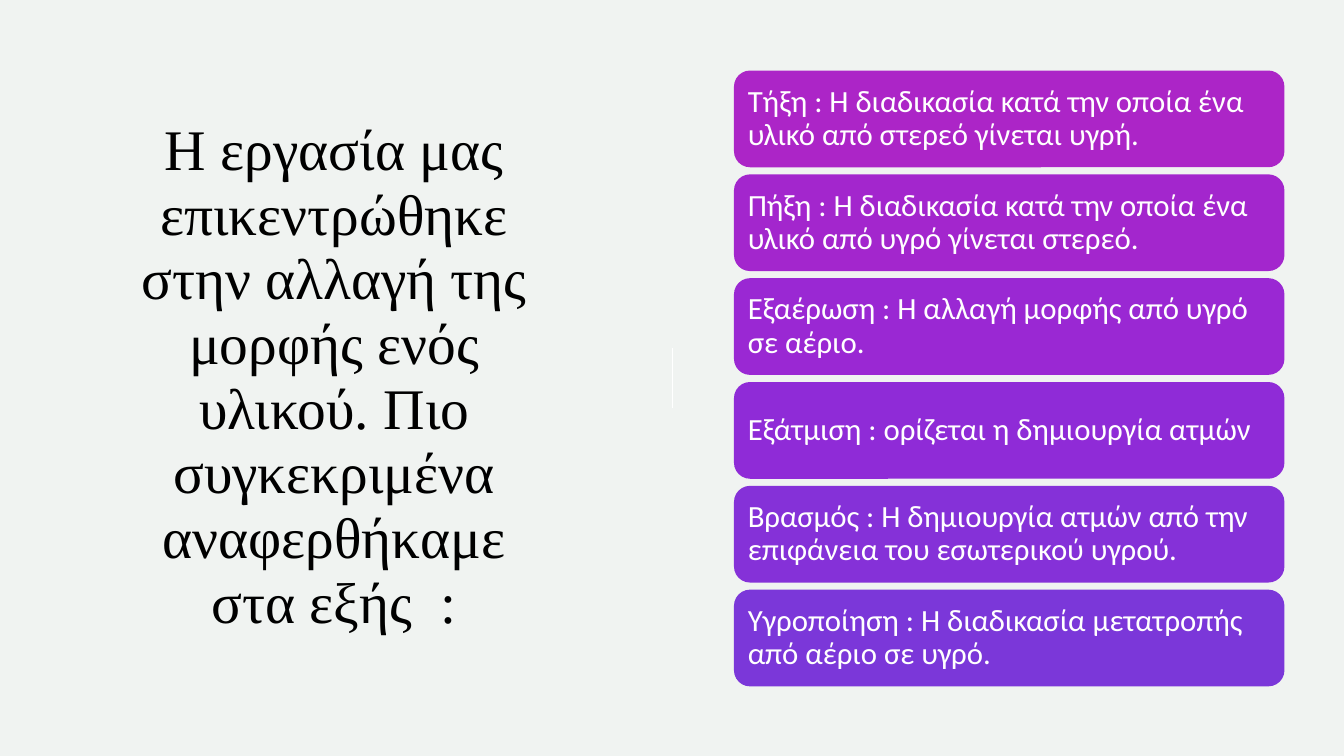
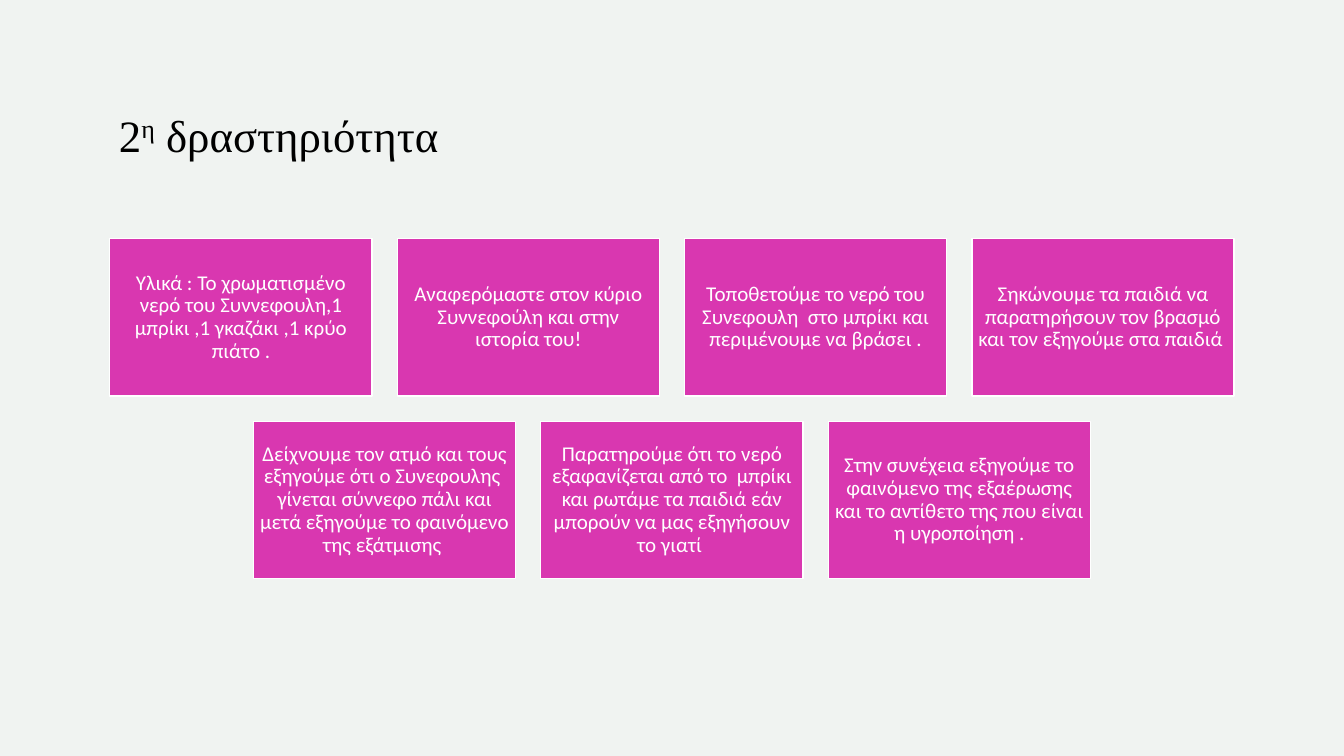
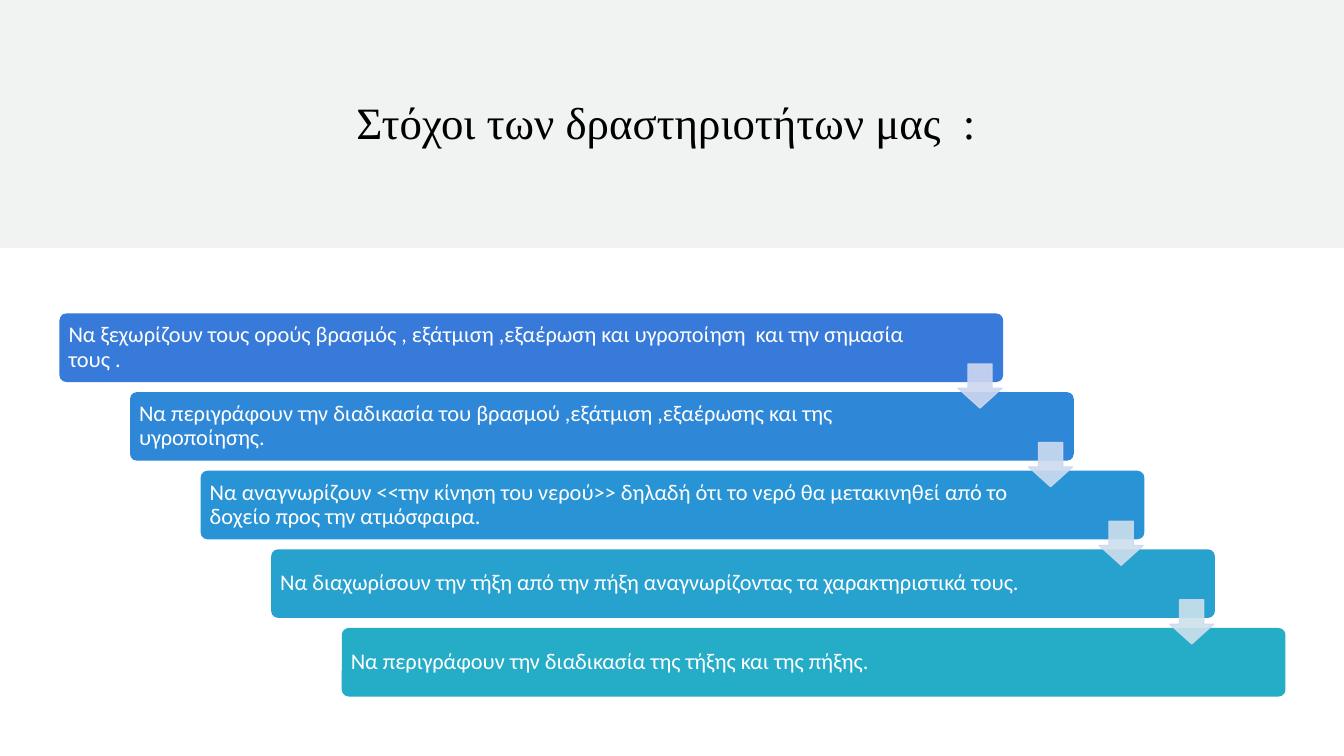
from lxml import etree
from pptx import Presentation
from pptx.dml.color import RGBColor
from pptx.enum.shapes import MSO_CONNECTOR, MSO_SHAPE
from pptx.enum.text import MSO_ANCHOR, MSO_AUTO_SIZE, PP_ALIGN
from pptx.oxml.ns import qn
from pptx.util import Inches, Pt

RECTANGLE = MSO_SHAPE.RECTANGLE
ROUNDED = MSO_SHAPE.ROUNDED_RECTANGLE
DOWN_ARROW = MSO_SHAPE.DOWN_ARROW
STRAIGHT = MSO_CONNECTOR.STRAIGHT
LEFT, CENTER = PP_ALIGN.LEFT, PP_ALIGN.CENTER
MIDDLE, BOTTOM = MSO_ANCHOR.MIDDLE, MSO_ANCHOR.BOTTOM
NO_AUTOFIT = MSO_AUTO_SIZE.NONE

SLIDE_WIDTH, SLIDE_HEIGHT = 13.33, 7.5
BACKGROUND, WHITE, BLACK = "F0F3F1", "FFFFFF", "000000"
CARD_COLOR, ARROW_LINE = "D937B0", "CED7F1"
TITLE_FONT, BODY_FONT = "Times New Roman", "Calibri"

DEFINITIONS = [
    ("AC25C7", "Τήξη : Η διαδικασία κατά την οποία ένα υλικό από στερεό γίνεται υγρή."),
    ("A326CD", "Πήξη : Η διαδικασία κατά την οποία ένα υλικό από υγρό γίνεται στερεό."),
    ("9A28D3", "Εξαέρωση : Η αλλαγή μορφής από υγρό σε αέριο."),
    ("8F2BD7", "Εξάτμιση : ορίζεται η δημιουργία ατμών"),
    ("8531D8", "Βρασμός : Η δημιουργία ατμών από την επιφάνεια του εσωτερικού υγρού."),
    ("7B37D9", "Υγροποίηση : Η διαδικασία μετατροπής από αέριο σε υγρό."),
]
ACTIVITY_ROWS = [
    [
        "Υλικά : Το χρωματισμένο νερό του Συννεφουλη,1 μπρίκι ,1 γκαζάκι ,1 κρύο πιάτο .",
        "Αναφερόμαστε στον κύριο Συννεφούλη και στην ιστορία του!",
        "Τοποθετούμε το νερό του Συνεφουλη  στο μπρίκι και περιμένουμε να βράσει .",
        "Σηκώνουμε τα παιδιά να παρατηρήσουν τον βρασμό και τον εξηγούμε στα παιδιά ",
    ],
    [
        "Δείχνουμε τον ατμό και τους εξηγούμε ότι ο Συνεφουλης  γίνεται σύννεφο πάλι "
        "και μετά εξηγούμε το φαινόμενο της εξάτμισης ",
        "Παρατηρούμε ότι το νερό εξαφανίζεται από το  μπρίκι και ρωτάμε τα παιδιά "
        "εάν μπορούν να μας εξηγήσουν το γιατί ",
        "Στην συνέχεια εξηγούμε το φαινόμενο της εξαέρωσης και το αντίθετο της "
        "που είναι η υγροποίηση .",
    ],
]
GOALS = [
    ("377AD9", "Να ξεχωρίζουν τους ορούς βρασμός , εξάτμιση ,εξαέρωση και υγροποίηση  "
               "και την σημασία τους ."),
    ("2F87D8", "Να περιγράφουν την διαδικασία του βρασμού ,εξάτμιση ,εξαέρωσης "
               "και της υγροποίησης."),
    ("2894D6", "Να αναγνωρίζουν <<την κίνηση του νερού>> δηλαδή ότι το νερό θα "
               "μετακινηθεί από το δοχείο προς την ατμόσφαιρα."),
    ("27A1CE", "Να διαχωρίσουν την τήξη από την πήξη αναγνωρίζοντας τα χαρακτηριστικά τους."),
    ("25ACC7", "Να περιγράφουν την διαδικασία της τήξης και της πήξης."),
]
ARROW_COLORS = ["CED7F1", "CDDBEF", "CDDFED", "CDE2EB"]


def rgb(color):
    """Turn a hex string into a colour."""
    return RGBColor.from_string(color)


def write_text(frame, text, size, font=BODY_FONT, color=WHITE, align=LEFT,
               anchor=MIDDLE, spacing=0.9, insets=None, superscript=""):
    """Write one formatted paragraph, raising the superscript part if given."""
    frame.word_wrap = True
    frame.auto_size = NO_AUTOFIT
    frame.vertical_anchor = anchor
    if insets:
        (frame.margin_left, frame.margin_top,
         frame.margin_right, frame.margin_bottom) = map(Inches, insets)
    paragraph = frame.paragraphs[0]
    paragraph.alignment = align
    paragraph.line_spacing = spacing
    for part in text.partition(superscript) if superscript else [text]:
        run = paragraph.add_run()
        run.text = part
        run.font.size = Pt(size)
        run.font.name = font
        run.font.color.rgb = rgb(color)
        if part == superscript:
            run.font._element.set("baseline", "30000")


def add_titled_slide(prs, title, box, size=32, **text_format):
    """Add a title-only slide with its title placed in the box."""
    slide = prs.slides.add_slide(prs.slide_layouts[5])
    heading = slide.shapes.title
    heading.left, heading.top, heading.width, heading.height = map(Inches, box)
    write_text(heading.text_frame, title, size, font=TITLE_FONT, color=BLACK, **text_format)
    return slide


def add_block(slide, kind, box, fill, line=None, line_width=0.75, adjustments=()):
    """Add a flat filled shape with an optional outline."""
    block = slide.shapes.add_shape(kind, *map(Inches, box))
    block.shadow.inherit = False
    block.fill.solid()
    block.fill.fore_color.rgb = rgb(fill)
    if line:
        block.line.color.rgb = rgb(line)
        block.line.width = Pt(line_width)
    else:
        block.line.fill.background()
    for index, value in enumerate(adjustments):
        block.adjustments[index] = value
    return block


def add_divider(slide, x, top, bottom):
    """Add a thin white vertical line."""
    divider = slide.shapes.add_connector(
        STRAIGHT, Inches(x), Inches(top), Inches(x), Inches(bottom))
    divider.line.color.rgb = rgb(WHITE)
    divider.line.width = Pt(1)
    etree.SubElement(divider._element.spPr, qn("a:effectLst"))


def set_opacity(shape, percent):
    """Make the fill and outline of a shape partly transparent."""
    for color in shape._element.spPr.iter(qn("a:srgbClr")):
        etree.SubElement(color, qn("a:alpha")).set("val", str(percent * 1000))


def build_definitions(prs):
    """Build the slide listing the changes of state."""
    slide = add_titled_slide(
        prs,
        "Η εργασία μας επικεντρώθηκε στην αλλαγή της μορφής ενός υλικού. "
        "Πιο συγκεκριμένα αναφερθήκαμε στα εξής  :",
        (1.18, 1.18, 4.27, 5.13), size=41, align=CENTER, spacing=0.94)
    add_divider(slide, 6.67, 3.45, 4.05)
    for index, (color, definition) in enumerate(DEFINITIONS):
        bar = add_block(slide, ROUNDED, (7.28, 0.7 + index * 1.03, 5.46, 0.96), color)
        write_text(bar.text_frame, definition, 22, insets=[0.09] * 4)


def build_activity(prs):
    """Build the slide with centred rows of activity cards."""
    slide = add_titled_slide(prs, "2η δραστηριότητα", (1.08, 0.43, 11.17, 1.22),
                             anchor=BOTTOM, spacing=1.0, superscript="η")
    width, height, gap = 2.6, 1.56, 0.25
    for row, steps in enumerate(ACTIVITY_ROWS):
        left = (SLIDE_WIDTH - len(steps) * (width + gap) + gap) / 2
        top = 2.37 + row * (height + gap)
        for column, step in enumerate(steps):
            card = add_block(slide, RECTANGLE,
                             (left + column * (width + gap), top, width, height),
                             CARD_COLOR, line=WHITE, line_width=0.85)
            write_text(card.text_frame, step, 15, align=CENTER, insets=[0.06] * 4)


def build_goals(prs):
    """Build the staircase of goals joined by arrows."""
    slide = add_titled_slide(prs, "Στόχοι των δραστηριοτήτων μας  : ",
                             (1.18, 0.59, 10.97, 1.23), align=CENTER, spacing=1.0)
    panel_top, step_x, step_y = 2.46, 0.7, 0.78
    add_block(slide, RECTANGLE,
              (0, panel_top, SLIDE_WIDTH, SLIDE_HEIGHT - panel_top), WHITE)
    for index, (color, goal) in enumerate(GOALS):
        bar = add_block(slide, ROUNDED,
                        (0.59 + index * step_x, 3.11 + index * step_y, 9.36, 0.68),
                        color, adjustments=[0.1])
        right_inset = 1.22 if index else 0.85
        write_text(bar.text_frame, goal, 16, insets=(0.07, 0.07, right_inset, 0.07))
    for index, color in enumerate(ARROW_COLORS):
        arrow = add_block(slide, DOWN_ARROW,
                          (9.5 + index * step_x, 3.61 + index * step_y, 0.44, 0.44),
                          color, line=ARROW_LINE, adjustments=[0.55, 0.45])
        set_opacity(arrow, 90)


def main():
    """Build and save the presentation."""
    prs = Presentation()
    prs.slide_width, prs.slide_height = Inches(SLIDE_WIDTH), Inches(SLIDE_HEIGHT)
    backdrop = prs.slide_master.background.fill
    backdrop.solid()
    backdrop.fore_color.rgb = rgb(BACKGROUND)
    build_definitions(prs)
    build_activity(prs)
    build_goals(prs)
    prs.save("out.pptx")


if __name__ == "__main__":
    main()
